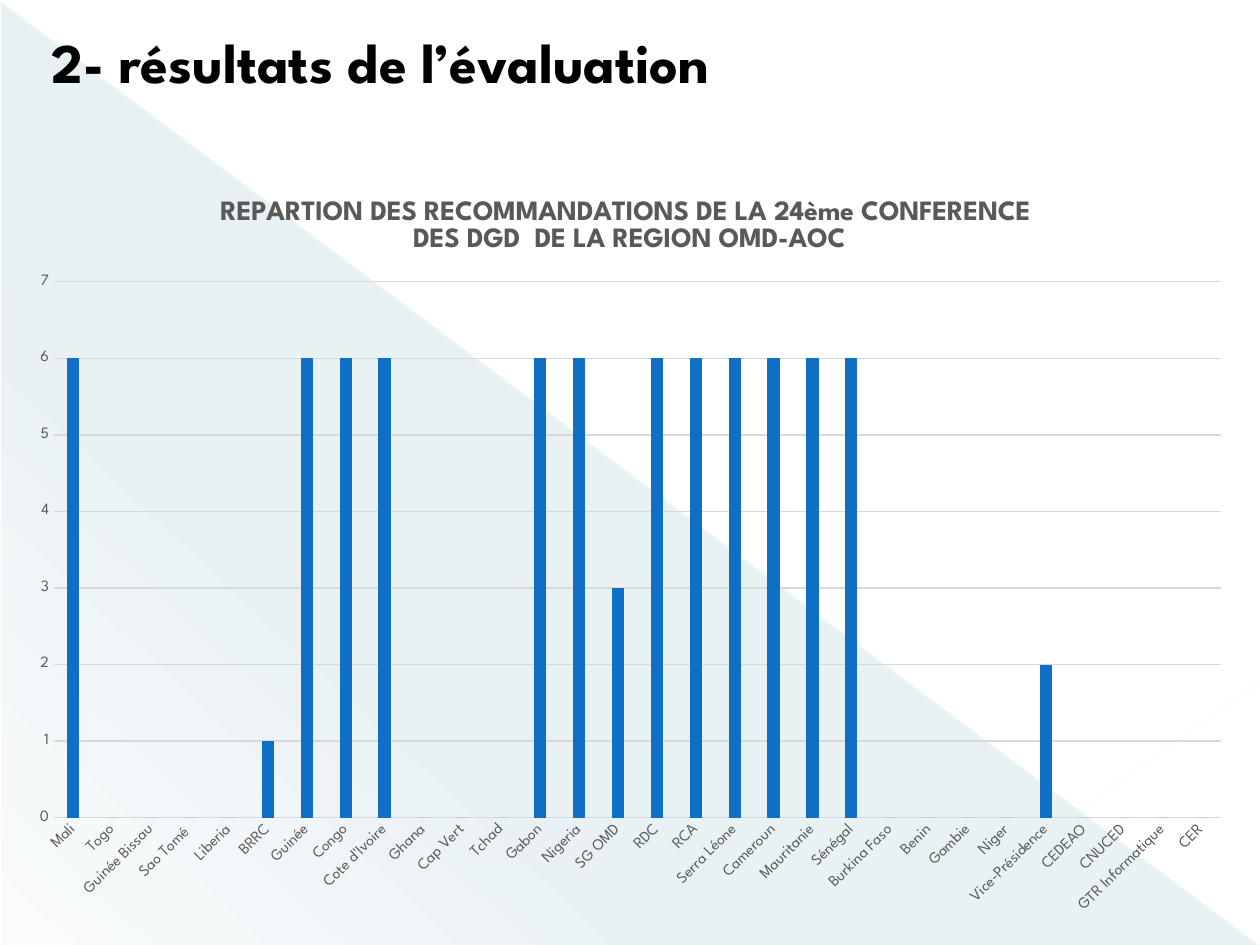
"""Build the slide on the results of the evaluation."""
from dataclasses import dataclass

from lxml.etree import SubElement
from pptx import Presentation
from pptx.chart.data import CategoryChartData
from pptx.dml.color import RGBColor
from pptx.enum.chart import XL_CHART_TYPE, XL_TICK_MARK
from pptx.enum.shapes import MSO_CONNECTOR, MSO_SHAPE
from pptx.enum.text import MSO_ANCHOR
from pptx.oxml import parse_xml
from pptx.oxml.ns import nsdecls, qn
from pptx.util import Inches, Pt

WIDE, HIGH = Inches(10), Inches(7.5)


@dataclass(frozen=True)
class Theme:
    """Hold the colours, the font and the type sizes."""
    face: str = "League Spartan"
    black: str = "000000"
    grey: str = "595959"
    rule: str = "D9D9D9"
    bar: str = "0F6FC6"
    tint: str = "04617B"
    head: int = 32
    title: int = 16
    text: int = 10
    label: int = 9


@dataclass(frozen=True)
class Box:
    """Place a part by percent of the slide."""
    left: float
    top: float
    width: float
    height: float

    def spans(self) -> tuple[int, int, int, int]:
        """Give the box in slide units."""
        return (round(self.left * WIDE / 100), round(self.top * HIGH / 100),
                round(self.width * WIDE / 100), round(self.height * HIGH / 100))


@dataclass(frozen=True)
class Ray:
    """Describe a faint line between two points, in percent."""
    start: tuple[float, float]
    end: tuple[float, float]
    color: str
    width: float
    alpha: int


THEME = Theme()
RAYS = [
    Ray((0, 0.13), (99.9, 99.87), "E9FCFF", 0.39, 35),
    Ray((100, 72.13), (70.7, 99.87), "EBFCFF", 0.47, 45),
]
STOPS = [(0, 10), (70, 8), (100, 1)]
NAMES = [
    "Mali", "Togo", "Guinée Bissau", "Sao Tomé ", "Liberia", "BRRC",
    "Guinée", "Congo", "Cote d'Ivoire", "Ghana", "Cap Vert", "Tchad",
    "Gabon", "Nigeria", "SG OMD", "RDC", "RCA", "Serra Léone",
    "Cameroun", "Mauritanie", "Sénégal", "Burkina Faso", "Benin",
    "Gambie", "Niger", "Vice-Présidence", "CEDEAO", "CNUCED",
    "GTR Informatique", "CER",
]
COUNTS = {"BRRC": 1, "SG OMD": 3, "Vice-Présidence": 2} | dict.fromkeys(
    ["Mali", "Guinée", "Congo", "Cote d'Ivoire", "Gabon", "Nigeria", "RDC",
     "RCA", "Serra Léone", "Cameroun", "Mauritanie", "Sénégal"], 6)


def style(font, size: int, color: str, bold: bool = False) -> None:
    """Set the face, size, colour and weight of a font."""
    font.name, font.size, font.bold = THEME.face, Pt(size), bold
    font.color.rgb = RGBColor.from_string(color)


def stroke(line, color: str, width: float) -> None:
    """Set the colour and width of a line."""
    line.color.rgb = RGBColor.from_string(color)
    line.width = Pt(width)


def wedge(slide, box: Box) -> None:
    """Draw the pale triangle with its fading fill."""
    shape = slide.shapes.add_shape(MSO_SHAPE.RIGHT_TRIANGLE, *box.spans())
    shape.shadow.inherit = False
    shape.line.fill.background()
    stops = "".join(
        f'<a:gs pos="{spot * 1000}"><a:srgbClr val="{THEME.tint}">'
        f'<a:alpha val="{alpha * 1000}"/></a:srgbClr></a:gs>'
        for spot, alpha in STOPS)
    fill = parse_xml(
        f'<a:gradFill {nsdecls("a")} rotWithShape="1"><a:gsLst>{stops}'
        f'</a:gsLst><a:lin ang="{133 * 60000}" scaled="0"/></a:gradFill>')
    shape.element.spPr.find(qn("a:prstGeom")).addnext(fill)


def beam(slide, ray: Ray) -> None:
    """Draw one faint line."""
    ends = [round(share * side / 100) for point in (ray.start, ray.end)
            for share, side in zip(point, (WIDE, HIGH))]
    line = slide.shapes.add_connector(MSO_CONNECTOR.STRAIGHT, *ends)
    stroke(line.line, ray.color, ray.width)
    frame = line.element.spPr
    tone = frame.find(".//" + qn("a:srgbClr"))
    SubElement(tone, qn("a:alpha")).set("val", str(ray.alpha * 1000))
    SubElement(frame, qn("a:effectLst"))


def head(slide, box: Box, text: str) -> None:
    """Write the slide heading."""
    frame = slide.shapes.add_textbox(*box.spans()).text_frame
    frame.word_wrap = True
    frame.vertical_anchor = MSO_ANCHOR.MIDDLE
    frame.text = text
    para = frame.paragraphs[0]
    para.line_spacing = 0.9
    style(para.runs[0].font, THEME.head, THEME.black, True)


def layout(inner: str, **shares: float) -> object:
    """Make a manual chart layout from percents of the chart."""
    modes = "".join(f'<c:{axis}Mode val="edge"/>' for axis in "xy")
    sizes = "".join(f'<c:{key} val="{val / 100:.4f}"/>'
                    for key, val in shares.items())
    return parse_xml(f'<c:layout {nsdecls("c")}><c:manualLayout>{inner}{modes}'
                     f'{sizes}</c:manualLayout></c:layout>')


def graph(slide, box: Box, title: str) -> None:
    """Draw the column chart with its title and axes."""
    data = CategoryChartData()
    data.categories = NAMES
    data.add_series("Series 1", [COUNTS.get(name, 0) for name in NAMES])
    chart = slide.shapes.add_chart(
        XL_CHART_TYPE.COLUMN_CLUSTERED, *box.spans(), data).chart
    style(chart.font, THEME.text, THEME.black)
    chart.has_legend = False
    frame = chart.chart_title.text_frame
    frame.text = title
    for para in frame.paragraphs:
        for run in para.runs:
            style(run.font, THEME.title, THEME.grey, True)

    plot = chart.plots[0]
    plot.vary_by_categories = False
    plot.gap_width, plot.overlap = 219, -27
    fill = plot.series[0].format.fill
    fill.solid()
    fill.fore_color.rgb = RGBColor.from_string(THEME.bar)

    base, scale = chart.category_axis, chart.value_axis
    for axis in (base, scale):
        axis.major_tick_mark = axis.minor_tick_mark = XL_TICK_MARK.NONE
        style(axis.tick_labels.font, THEME.label, THEME.grey)
    stroke(base.format.line, THEME.rule, 0.75)
    scale.format.line.fill.background()
    scale.minimum_scale, scale.maximum_scale, scale.major_unit = 0, 7, 1
    stroke(scale.major_gridlines.format.line, THEME.rule, 0.75)

    root = chart.element
    body = root.xpath(".//c:catAx/c:txPr/a:bodyPr")[0]
    body.set("rot", str(-45 * 60000))
    body.set("vert", "horz")
    for old in root.xpath(".//c:title/c:layout | .//c:plotArea/c:layout"):
        old.getparent().remove(old)
    root.xpath(".//c:title/c:tx")[0].addnext(layout("", x=16.38, y=2.95))
    area = layout('<c:layoutTarget val="inner"/>',
                  x=3.16, y=14.45, w=94.9, h=70.9)
    root.xpath(".//c:plotArea")[0].insert(0, area)


def main() -> None:
    """Build and save the deck."""
    deck = Presentation()
    deck.slide_width, deck.slide_height = WIDE, HIGH
    slide = deck.slides.add_slide(deck.slide_layouts[6])
    wedge(slide, Box(0.1, 0.27, 99.8, 99.73))
    for ray in RAYS:
        beam(slide, ray)
    head(slide, Box(3.1, -4.53, 93.7, 22.93), "2- résultats de l’évaluation")
    graph(slide, Box(1.2, 18.27, 97.6, 80),
          "REPARTION DES RECOMMANDATIONS DE LA 24ème CONFERENCE \n"
          "DES DGD  DE LA REGION OMD-AOC")
    deck.save("out.pptx")


if __name__ == "__main__":
    main()
